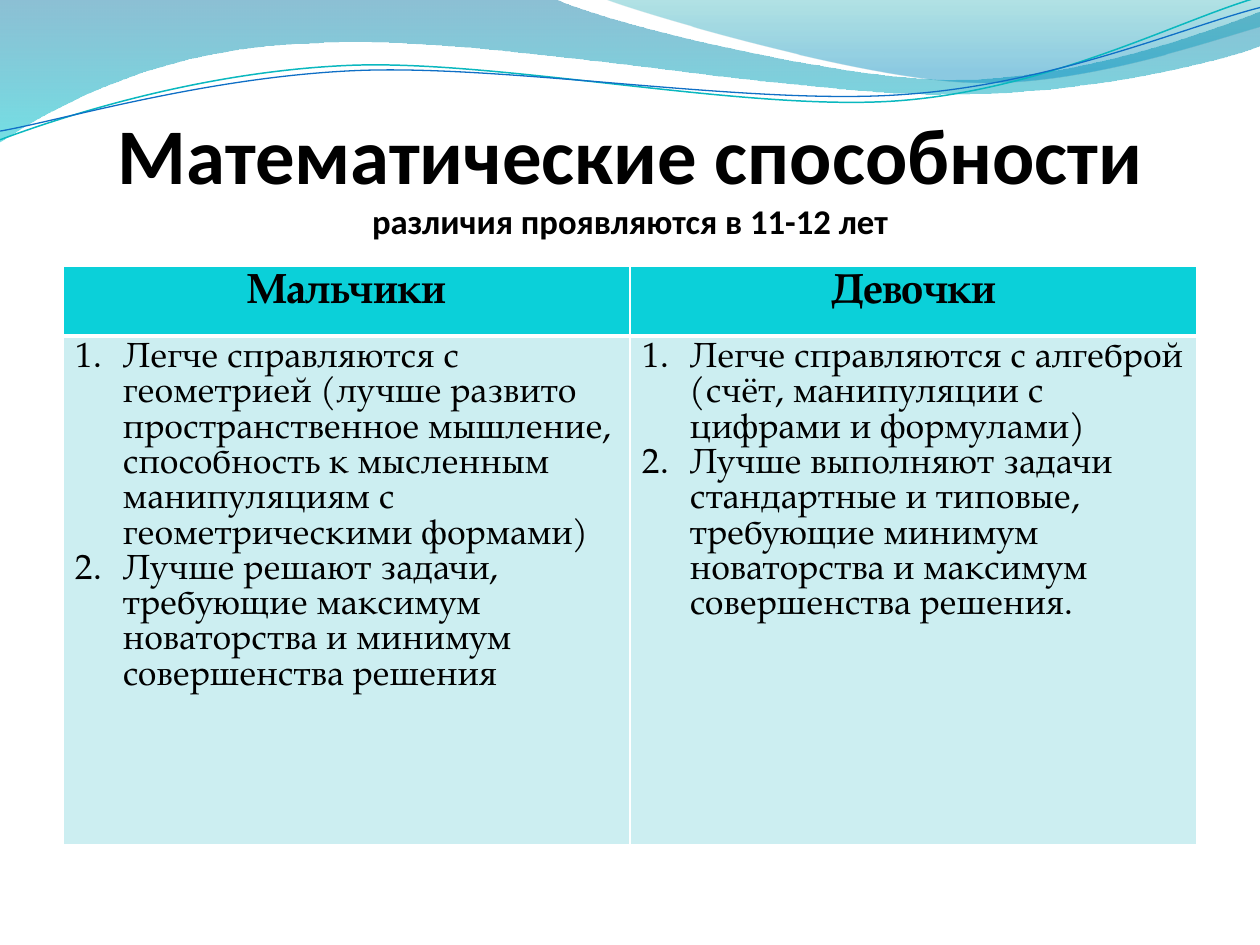
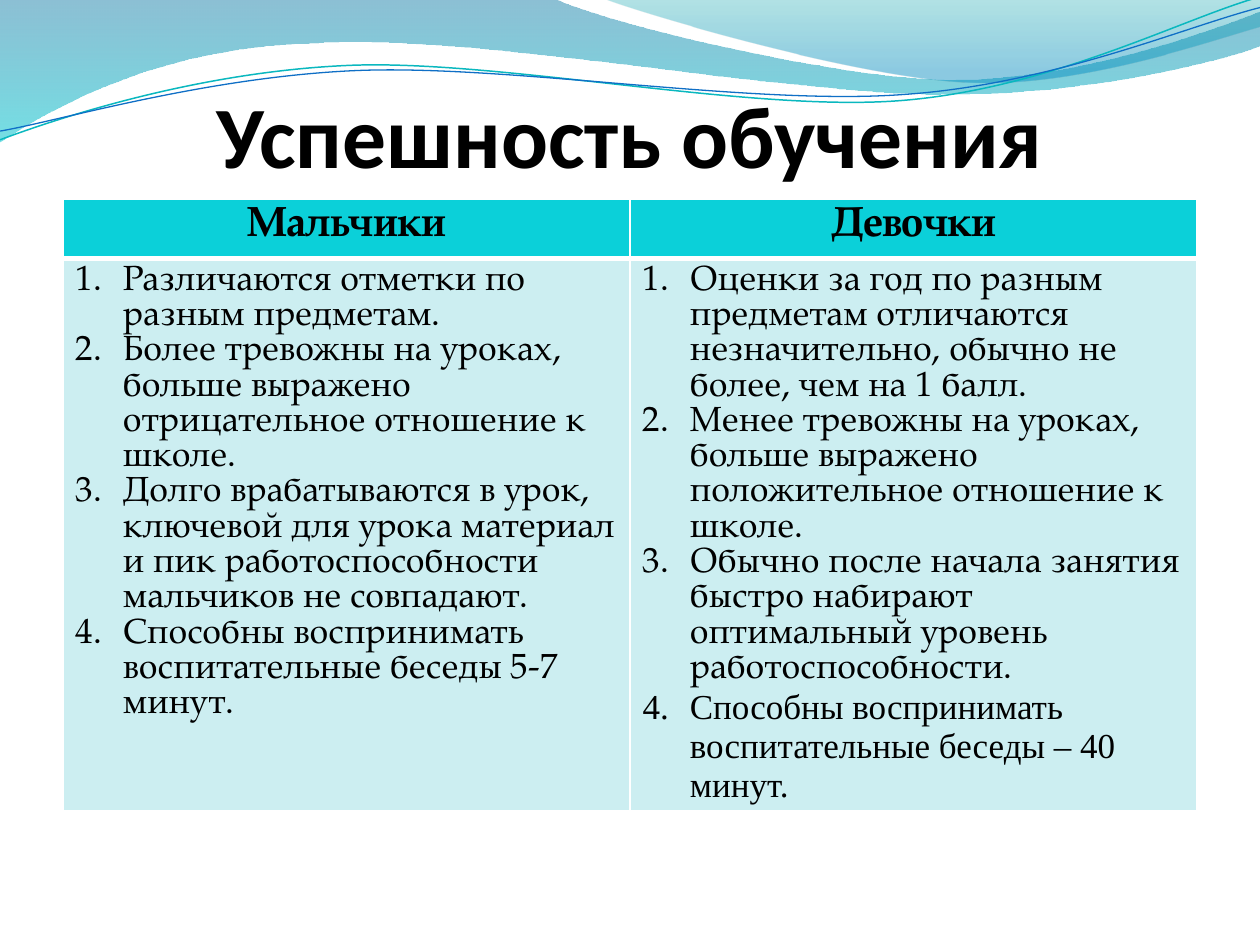
"""Build two slides comparing boys and girls under a shared wave header."""
from lxml.etree import SubElement
from pptx import Presentation
from pptx.dml.color import RGBColor
from pptx.enum.text import MSO_ANCHOR, MSO_AUTO_SIZE, PP_ALIGN
from pptx.oxml.ns import qn
from pptx.util import Pt

BLACK = RGBColor(0x00, 0x00, 0x00)
WHITE = RGBColor(0xFF, 0xFF, 0xFF)
HEADER = RGBColor(0x0B, 0xD0, 0xD9)
BODY = RGBColor(0xCC, 0xEE, 0xF1)
DEEP_BLUE = RGBColor(0x00, 0x74, 0xA1)
CYAN = RGBColor(0x00, 0xC6, 0xCF)
TEAL = RGBColor(0x00, 0xA1, 0xA9)
SKY = RGBColor(0x00, 0x8B, 0xBF)
LINE_TEAL = RGBColor(0x0A, 0xB8, 0xBF)
LINE_BLUE = RGBColor(0x0F, 0x6F, 0xC6)
TITLE_FONT = "Calibri"
BODY_FONT = "TeX Gyre Pagella"
SERIF_FONT = "Times New Roman"
LEFT, WIDTH, INDENT = 36, 648, 27

BANDS = [
    ([(0, 0), (316.8, -0.7), (342.7, 12.2, 478.1, 45.4, 545.8, 45.4),
      (614.2, 45.4, 689.8, 18.7, 720, 6.5), (720.7, 25.9),
      (707.8, 31.7, 626.4, 54.7, 537.1, 54), (447.8, 54, 275, 20.2, 185, 24.5),
      (92.9, 25.9, 33.1, 59.8, -0.7, 81.4), (0, 0)],
     [(0, DEEP_BLUE, 45), (1, CYAN, 55)]),
    ([(344.9, -0.7), (366.5, 7.9, 491, 44.6, 553.7, 46.8),
      (616.3, 49.7, 691.9, 23, 720, 15.1), (720, 0), (344.9, -0.7)],
     [(0, TEAL, 30), (0.8, SKY, 45)]),
]
WAVES = [
    ([(0, 79.9), (34.6, 67, 113.8, 41, 199.4, 37.4),
      (284.4, 33.8, 427, 64.1, 513.4, 57.6),
      (599.8, 51.1, 675.4, 10.8, 718.6, -1.4)], LINE_TEAL, 0.85),
    ([(0, 74.9), (33.8, 69.1, 118.1, 43.9, 203.8, 40.3),
      (290.2, 36.7, 429.8, 60.5, 516.2, 54),
      (601.9, 48.2, 677.5, 15.1, 720, 4.3)], LINE_BLUE, 0.75),
]
SLIDES = [
    dict(
        title=[("Математические способности", 45),
               ("различия проявляются в 11-12 лет", 19.8)],
        title_box=(55.4, 82.8), table_top=152.4, rows=(39.6, 290.9),
        boys=[
            "Легче справляются с геометрией (лучше развито пространственное мышление, "
            "способность к мысленным манипуляциям с геометрическими формами)",
            "Лучше решают задачи, требующие максимум новаторства и минимум "
            "совершенства решения",
        ],
        girls=[
            "Легче справляются с алгеброй (счёт, манипуляции с цифрами и формулами)",
            "Лучше выполняют задачи стандартные и типовые, требующие минимум "
            "новаторства и максимум совершенства решения.",
        ],
        serif_items=[]),
    dict(
        title=[("Успешность обучения", 50)],
        title_box=(41.6, 64.8), table_top=114, rows=(33.8, 285.1),
        boys=[
            "Различаются отметки по разным предметам.",
            "Более тревожны на уроках, больше выражено отрицательное отношение к школе.",
            "Долго врабатываются в урок, ключевой для урока материал и пик "
            "работоспособности мальчиков не совпадают.",
            "Способны воспринимать воспитательные беседы 5-7 минут.",
        ],
        girls=[
            "Оценки за год по разным предметам отличаются незначительно, обычно не "
            "более, чем на 1 балл.",
            "Менее тревожны на уроках, больше выражено положительное отношение к школе.",
            "Обычно после начала занятия быстро набирают оптимальный уровень "
            "работоспособности.",
            "Способны воспринимать воспитательные беседы – 40 минут.",
        ],
        serif_items=["Способны воспринимать воспитательные беседы – 40 минут."]),
]


def add_text(p, text, size=20, font=BODY_FONT, bold=False, align=None):
    r = p.add_run()
    r.text = text
    r.font.size = Pt(size)
    r.font.name = font
    r.font.bold = bold
    r.font.color.rgb = BLACK
    if align is not None:
        p.alignment = align


def add_curve(shapes, steps, close):
    points = [(Pt(x), Pt(y)) for step in steps for x, y in zip(step[::2], step[1::2])]
    builder = shapes.build_freeform(*points[0])
    builder.add_line_segments(points[1:], close=close)
    sp = builder.convert_to_shape()
    sp.shadow.inherit = False
    lines = sp.element.spPr.iter(qn("a:lnTo"))
    lines = iter(list(lines))
    for step in steps[1:]:
        first = next(lines)
        if len(step) == 6:
            curve = first.getparent().makeelement(qn("a:cubicBezTo"))
            first.addprevious(curve)
            for line in (first, next(lines), next(lines)):
                curve.append(line[0])
                line.getparent().remove(line)
    return sp


prs = Presentation()
prs.slide_width, prs.slide_height = Pt(720), Pt(540)
layout = prs.slide_layouts[5]
slides = [prs.slides.add_slide(layout) for _ in SLIDES]
background = []

for steps, stops in BANDS:
    sp = add_curve(slides[0].shapes, steps, close=True)
    sp.line.fill.background()
    sp.fill.gradient()
    sp.fill.gradient_angle = 270
    for stop, (position, color, _) in zip(sp.fill.gradient_stops, stops):
        stop.position = position
        stop.color.rgb = color
    for clr, (_, _, opacity) in zip(sp.element.spPr.iter(qn("a:srgbClr")), stops):
        SubElement(clr, qn("a:alpha"), val=str(opacity * 1000))
    background.append(sp)

for steps, color, width in WAVES:
    sp = add_curve(slides[0].shapes, steps, close=False)
    sp.fill.background()
    sp.line.color.rgb = color
    sp.line.width = Pt(width)
    background.append(sp)

for i, sp in enumerate(background):
    prs.slide_master.shapes.element.insert(2 + i, sp.element)

for s, content in zip(slides, SLIDES):
    title = s.shapes.title
    top, height = content["title_box"]
    title.left, title.top, title.width, title.height = Pt(LEFT), Pt(top), Pt(WIDTH), Pt(height)
    tf = title.text_frame
    tf.auto_size = MSO_AUTO_SIZE.NONE
    tf.word_wrap = True
    tf.vertical_anchor = MSO_ANCHOR.BOTTOM
    tf.margin_left = tf.margin_right = tf.margin_bottom = 0
    tf.margin_top = Pt(3.6)
    p = tf.paragraphs[0]
    for i, (text, size) in enumerate(content["title"]):
        if i:
            p.add_line_break()
        add_text(p, text, size=size, font=TITLE_FONT, bold=True, align=PP_ALIGN.CENTER)

    table = s.shapes.add_table(2, 2, Pt(LEFT), Pt(content["table_top"]), Pt(WIDTH),
                               Pt(sum(content["rows"]))).table
    for row, height in zip(table.rows, content["rows"]):
        row.height = Pt(height)

    for col, (heading, items) in enumerate([("Мальчики", content["boys"]),
                                            ("Девочки", content["girls"])]):
        add_text(table.cell(0, col).text_frame.paragraphs[0], heading, size=24, bold=True,
                 align=PP_ALIGN.CENTER)
        tf = table.cell(1, col).text_frame
        for i, item in enumerate(items):
            p = tf.add_paragraph() if i else tf.paragraphs[0]
            add_text(p, item, font=SERIF_FONT if item in content["serif_items"] else BODY_FONT)
            pPr = p._p.get_or_add_pPr()
            pPr.set("marL", str(Pt(INDENT)))
            pPr.set("indent", str(-Pt(INDENT)))
            SubElement(pPr, qn("a:buFont"), typeface="+mj-lt")
            SubElement(pPr, qn("a:buAutoNum"), type="arabicPeriod")

        for row, (fill, bottom) in enumerate([(HEADER, 3), (BODY, 1)]):
            cell = table.cell(row, col)
            tcPr = cell._tc.get_or_add_tcPr()
            for side, width in (("lnL", 1), ("lnR", 1), ("lnT", 1), ("lnB", bottom)):
                ln = SubElement(tcPr, qn(f"a:{side}"), w=str(Pt(width)))
                SubElement(SubElement(ln, qn("a:solidFill")), qn("a:srgbClr"), val=str(WHITE))
            cell.fill.solid()
            cell.fill.fore_color.rgb = fill

prs.save("out.pptx")
